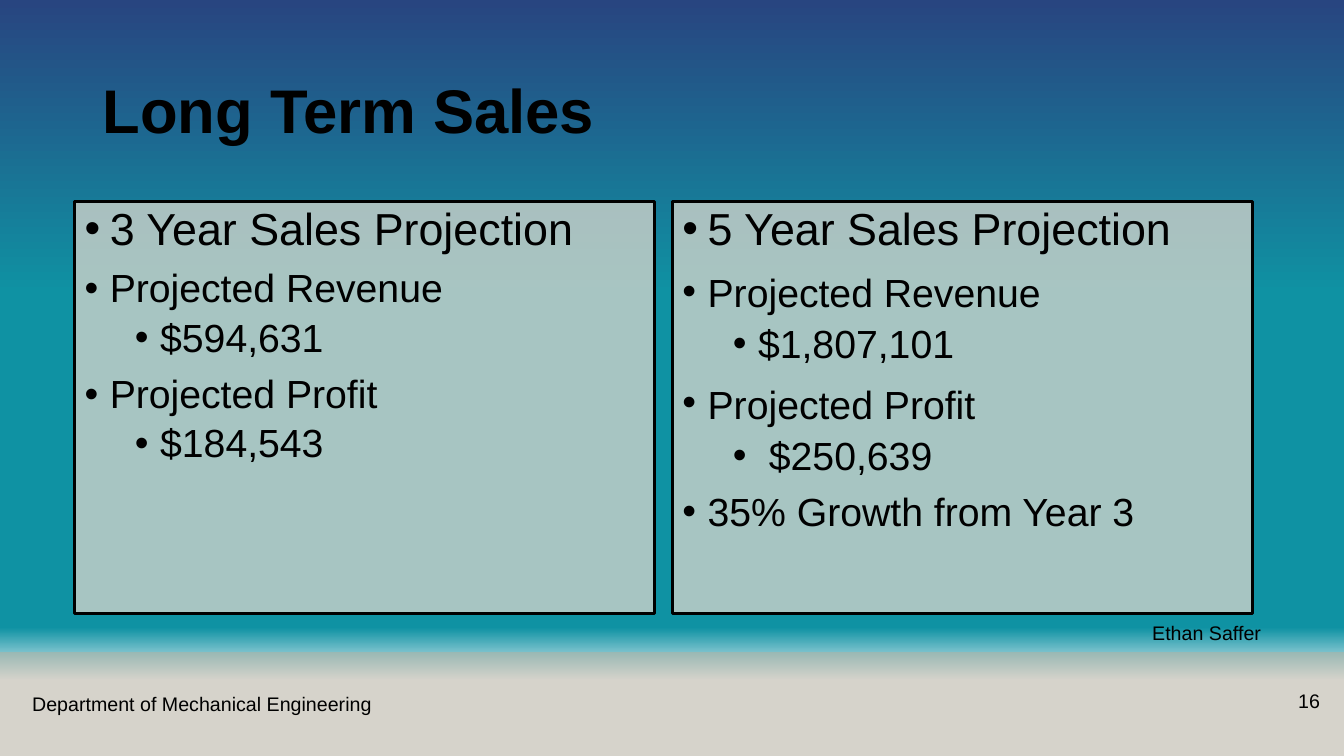
from lxml import etree
from pptx import Presentation
from pptx import util as u
from pptx.dml.color import RGBColor
from pptx.enum import shapes, text
from pptx.oxml import ns

EMU_PER_PX = 9144


def px(length):
    return u.Emu(length * EMU_PER_PX)


def color(value):
    return RGBColor.from_string(value)


def add_alpha(element, percent):
    etree.SubElement(element, ns.qn("a:alpha"), val=str(percent * 1000))


class SlideBuilder:
    """Holds the style and the current slide, and draws each kind of element."""

    font = "Arial"
    ink = "000000"
    small = 14

    def __init__(self, presentation):
        self.slide = presentation.slides.add_slide(presentation.slide_layouts[6])

    def background(self, stops):
        fill = self.slide.background.fill
        fill.gradient()
        fill.gradient_angle = 90
        stop_list = fill._fill._gradFill.find(ns.qn("a:gsLst"))
        for stop in list(stop_list):
            stop_list.remove(stop)
        for position, value, alpha in stops:
            stop = etree.SubElement(stop_list, ns.qn("a:gs"), pos=str(position * 1000))
            rgb = etree.SubElement(stop, ns.qn("a:srgbClr"), val=value)
            if alpha < 100:
                add_alpha(rgb, alpha)

    def rectangle(self, box, fill, alpha, line_width=0):
        shape = self.slide.shapes.add_shape(shapes.MSO_SHAPE.RECTANGLE, *map(px, box))
        shape.shadow.inherit = False
        shape.fill.solid()
        shape.fill.fore_color.rgb = color(fill)
        add_alpha(shape._element.spPr.find(f".//{ns.qn('a:srgbClr')}"), alpha)
        if line_width:
            shape.line.color.rgb = color(self.ink)
            shape.line.width = u.Pt(line_width)
        else:
            shape.line.fill.background()
        return shape

    def format_run(self, run, size, bold=False):
        run.font.name = self.font
        run.font.size = u.Pt(size)
        run.font.bold = bold
        run.font.color.rgb = color(self.ink)

    def label(self, box, words, size=small, bold=False, wrap=True, spacing=1.0,
              anchor=text.MSO_ANCHOR.TOP, align=text.PP_ALIGN.LEFT):
        text_frame = self.slide.shapes.add_textbox(*map(px, box)).text_frame
        text_frame.word_wrap = wrap
        text_frame.vertical_anchor = anchor
        text_frame.text = words
        paragraph = text_frame.paragraphs[0]
        paragraph.alignment = align
        paragraph.line_spacing = spacing
        self.format_run(paragraph.runs[0], size, bold)

    def bullet(self, paragraph, level):
        properties = paragraph._p.get_or_add_pPr()
        properties.set("marL", str(px(25 + 50 * level)))
        properties.set("indent", str(px(-25)))
        etree.SubElement(properties, ns.qn("a:buFont"), typeface=self.font)
        etree.SubElement(properties, ns.qn("a:buChar"), char="•")

    def panel(self, box, items):
        text_frame = self.rectangle(box, "DBD7CD", 75, 2.25).text_frame
        text_frame.vertical_anchor = text.MSO_ANCHOR.TOP
        for index, (level, *runs) in enumerate(items):
            paragraph = text_frame.add_paragraph() if index else text_frame.paragraphs[0]
            self.bullet(paragraph, level)
            paragraph.level = level
            paragraph.alignment = text.PP_ALIGN.LEFT
            paragraph.line_spacing = 0.9
            if index:
                paragraph.space_before = u.Pt(5 if level else 10)
            for words, size in runs:
                run = paragraph.add_run()
                run.text = words
                self.format_run(run, size)


def main():
    presentation = Presentation()
    presentation.slide_width, presentation.slide_height = px(1333), px(750)
    builder = SlideBuilder(presentation)
    builder.background([
        (10, "F6F8FC", 0),
        (17, "0F92A3", 61),
        (39, "0F92A3", 100),
        (61, "0F92A3", 100),
        (100, "284580", 100),
    ])
    builder.rectangle((0, 647, 1333, 103), "B7B09C", 50)
    builder.label((22, 682, 359, 34), "Department of Mechanical Engineering", wrap=False)
    builder.label((92, 40, 1150, 145), "Long Term Sales", size=44, bold=True,
                  spacing=0.9, anchor=text.MSO_ANCHOR.MIDDLE)
    builder.label((1242, 679, 77, 40), "16", align=text.PP_ALIGN.RIGHT)
    builder.label((1133, 614, 200, 34), "Ethan Saffer", spacing=0.9)

    heading, body = 32, 28
    builder.panel((667, 200, 575, 409), [
        (0, ("5 Year Sales Projection", heading)),
        (0, ("Projected Revenue", body), (" ", heading)),
        (1, ("$1,807,101", body)),
        (0, ("Projected Profit", body), (" ", heading)),
        (1, (" $250,639", body)),
        (0, ("35% Growth from Year 3", body)),
    ])
    builder.panel((74, 200, 575, 409), [
        (0, ("3 Year Sales Projection", heading)),
        (0, ("Projected Revenue", body)),
        (1, ("$594,631", body)),
        (0, ("Projected Profit ", body)),
        (1, ("$184,543", body)),
    ])
    presentation.save("out.pptx")


if __name__ == "__main__":
    main()
